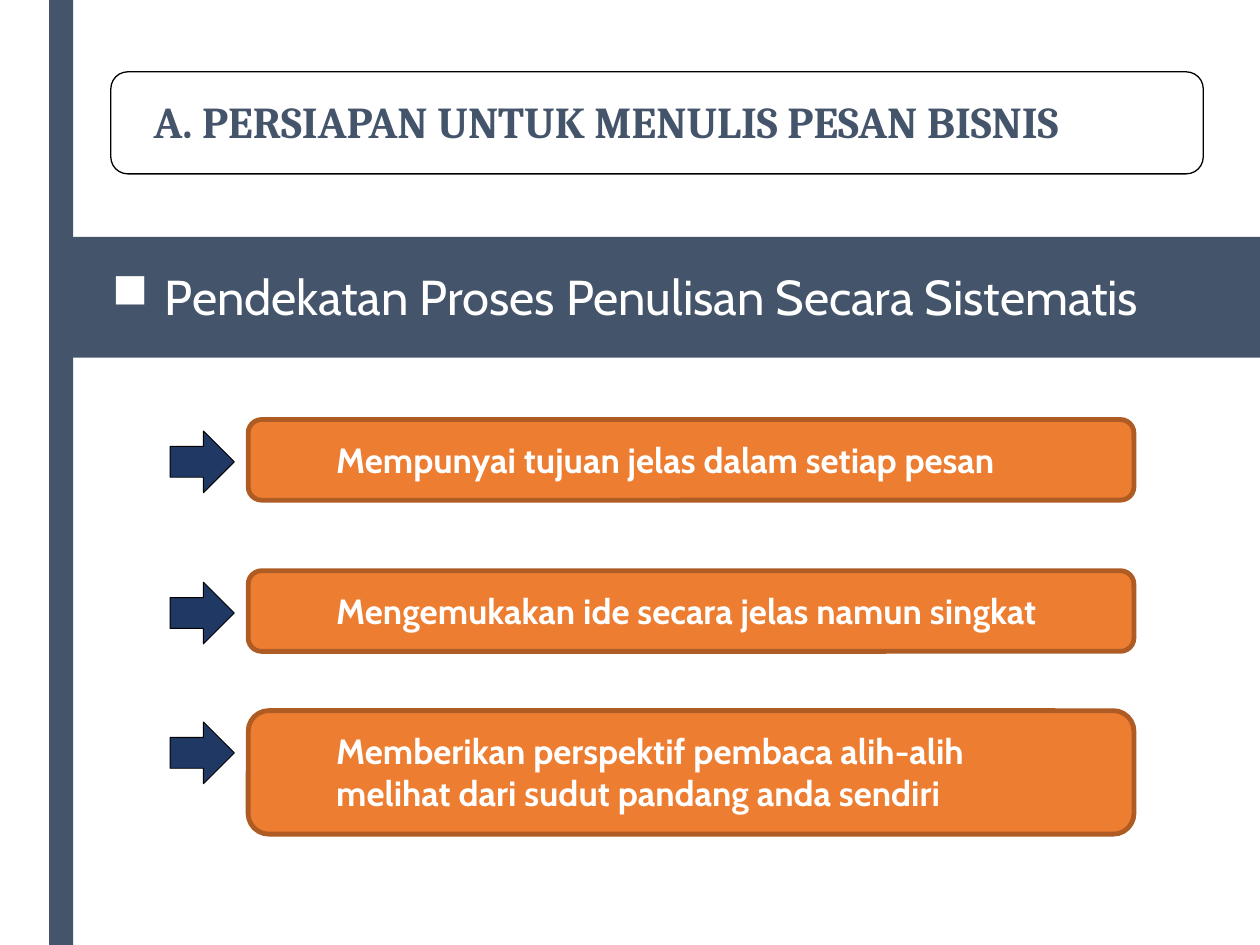
from lxml import etree
from pptx import Presentation
from pptx import util as u
from pptx.dml.color import RGBColor
from pptx.enum import shapes, text
from pptx.oxml.ns import qn

COLORS = {
    "slate": "44546A",
    "navy": "203864",
    "orange": "ED7D31",
    "rust": "AF5C24",
    "black": "000000",
    "white": "FFFFFF",
}
KINDS = shapes.MSO_SHAPE


def rgb(name):
    return RGBColor.from_string(COLORS[name])


class SlideBuilder:
    def __init__(self, slide, font="Cabin"):
        self.slide = slide
        self.font = font

    def shape(self, kind, box, fill=None, line=None, weight=0.75):
        shape = self.slide.shapes.add_shape(kind, *map(u.Inches, box))
        shape.shadow.inherit = False
        if fill:
            shape.fill.solid()
            shape.fill.fore_color.rgb = rgb(fill)
        else:
            shape.fill.background()
        if line:
            shape.line.color.rgb = rgb(line)
            shape.line.width = u.Pt(weight)
        else:
            shape.line.fill.background()
        return shape

    def text(self, words, box, size, color="white", font=None, bold=False,
             spacing=None, anchor=text.MSO_ANCHOR.TOP, indent=0, bullet=None):
        """Add one wrapped paragraph; a bullet hangs in the indent."""
        frame = self.slide.shapes.add_textbox(*map(u.Inches, box)).text_frame
        frame.word_wrap = True
        frame.vertical_anchor = anchor
        paragraph = frame.paragraphs[0]
        paragraph.text = words
        if spacing:
            paragraph.line_spacing = spacing
        if indent:
            properties = paragraph._p.get_or_add_pPr()
            properties.set("marL", str(u.Inches(indent)))
            properties.set("indent", str(u.Inches(-indent if bullet else 0)))
            if bullet:
                etree.SubElement(properties, qn("a:buChar")).set("char", bullet)
        paragraph.font.name = font or self.font
        paragraph.font.size = u.Pt(size)
        paragraph.font.bold = bold
        paragraph.font.color.rgb = rgb(color)
        return frame

    def point(self, words, top, height):
        """Add an arrow and the orange panel it points to."""
        self.shape(KINDS.RIGHT_ARROW, (1.35, top + 0.09, 0.51, 0.49),
                   "navy", "black", 0.5)
        self.shape(KINDS.ROUNDED_RECTANGLE, (1.97, top, 7.03, height),
                   "orange", "rust", 2.75)
        frame = self.text(words, (2.07, top + 0.1, 6.5, height - 0.2), 20,
                          bold=True, indent=0.5)
        frame.paragraphs[0].level = 1
        frame.auto_size = text.MSO_AUTO_SIZE.SHAPE_TO_FIT_TEXT


def main():
    deck = Presentation()
    deck.slide_width, deck.slide_height = u.Inches(10), u.Inches(7.5)
    builder = SlideBuilder(deck.slides.add_slide(deck.slide_layouts[6]))

    builder.shape(KINDS.RECTANGLE, (0.39, 0, 0.19, 7.5), "slate")
    builder.shape(KINDS.RECTANGLE, (0.56, 1.88, 9.44, 0.96), "slate")
    builder.shape(KINDS.ROUNDED_RECTANGLE, (0.88, 0.57, 8.67, 0.81), line="black")
    builder.text("A. PERSIAPAN UNTUK MENULIS PESAN BISNIS",
                 (1.12, 0.75, 7.88, 0.47), 25.2, "slate", "Cambria", bold=True,
                 spacing=0.89, anchor=text.MSO_ANCHOR.MIDDLE)
    builder.text("Pendekatan Proses Penulisan Secara Sistematis",
                 (0.79, 2.1, 9.06, 0.6), 28, spacing=0.94, indent=0.42, bullet="■")

    points = [
        ("Mempunyai tujuan jelas dalam setiap pesan", 3.33, 0.64),
        ("Mengemukakan ide secara jelas namun singkat", 4.53, 0.64),
        ("Memberikan perspektif pembaca alih-alih melihat dari sudut pandang "
         "anda sendiri", 5.64, 0.98),
    ]
    for words, top, height in points:
        builder.point(words, top, height)

    deck.save("out.pptx")


if __name__ == "__main__":
    main()
